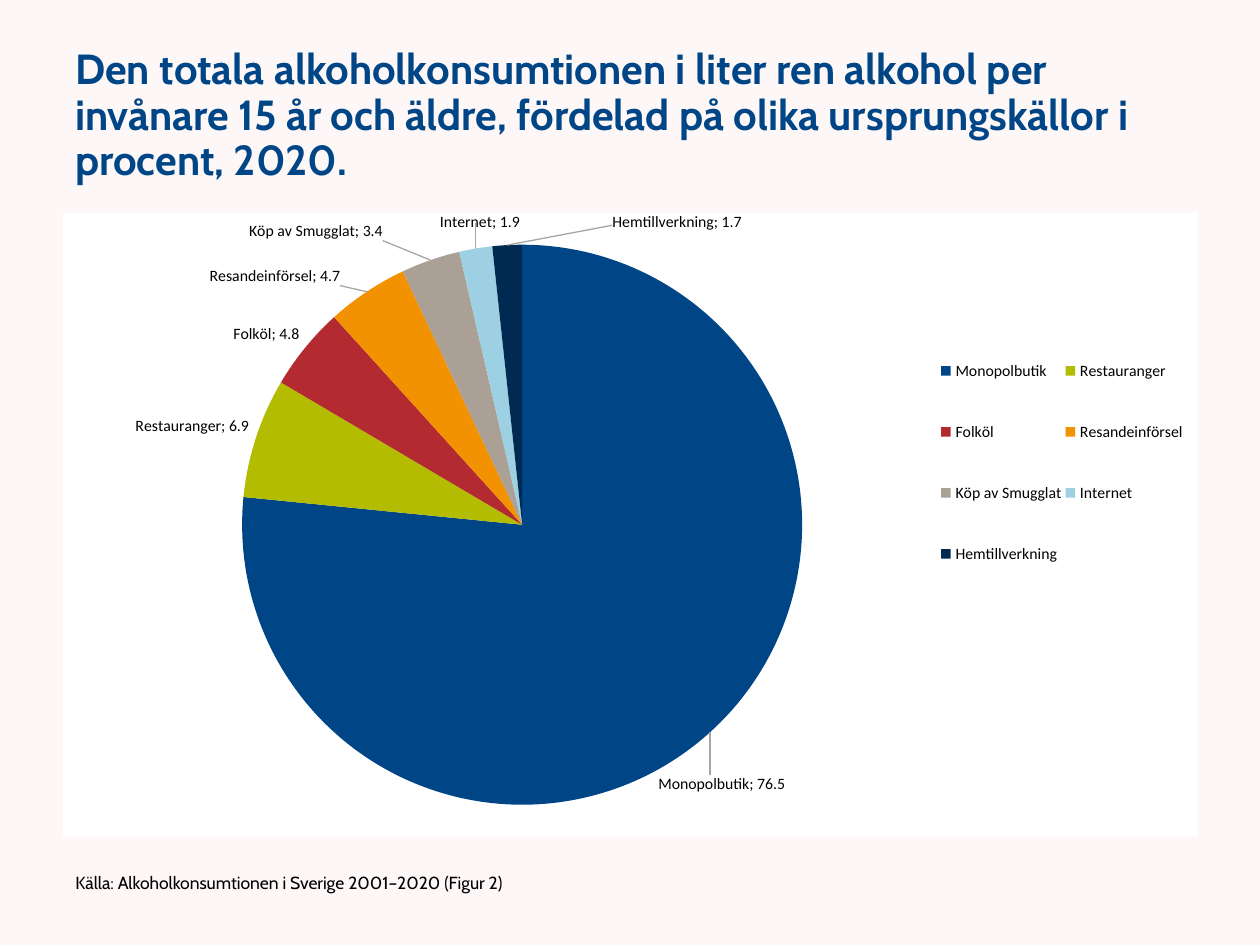
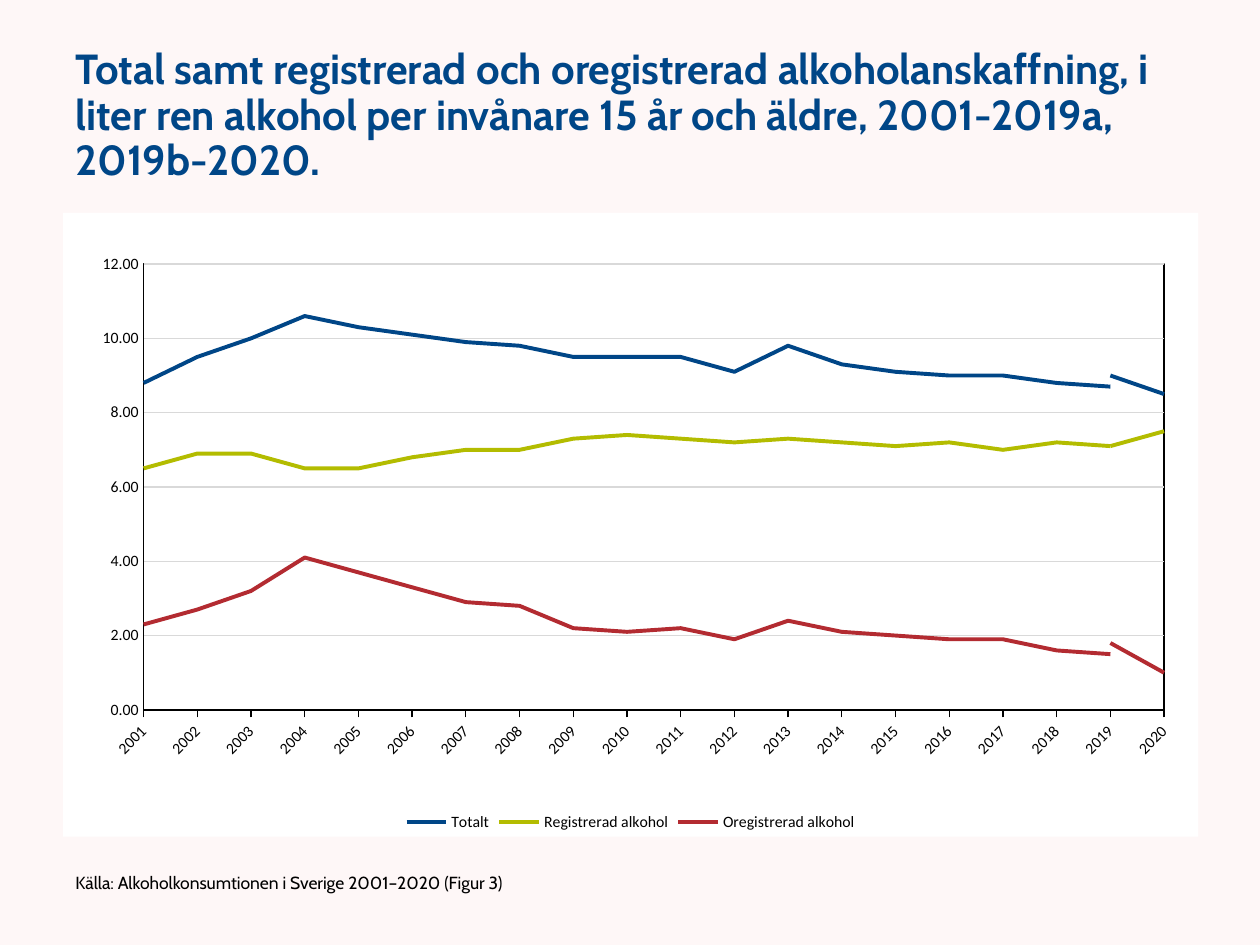
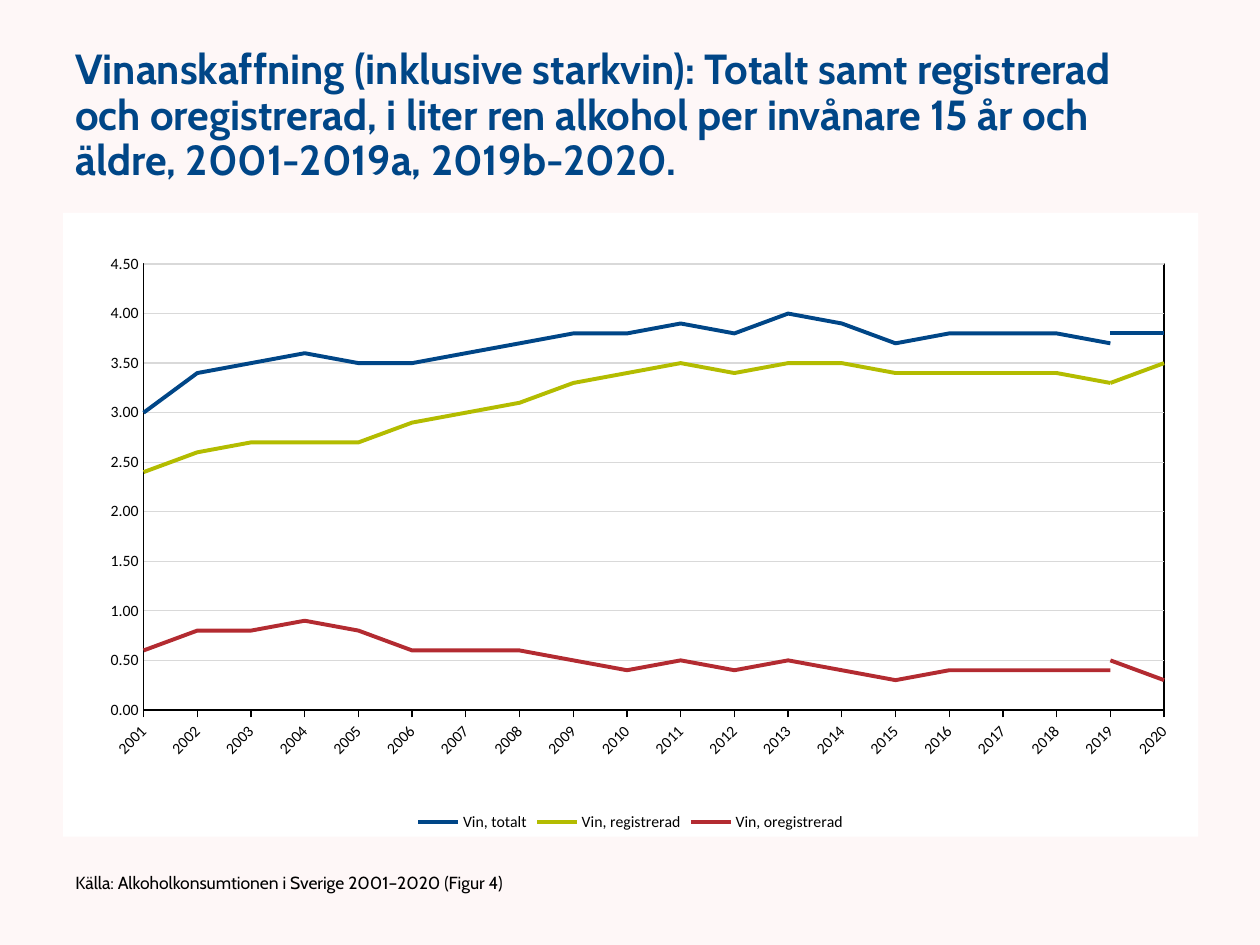
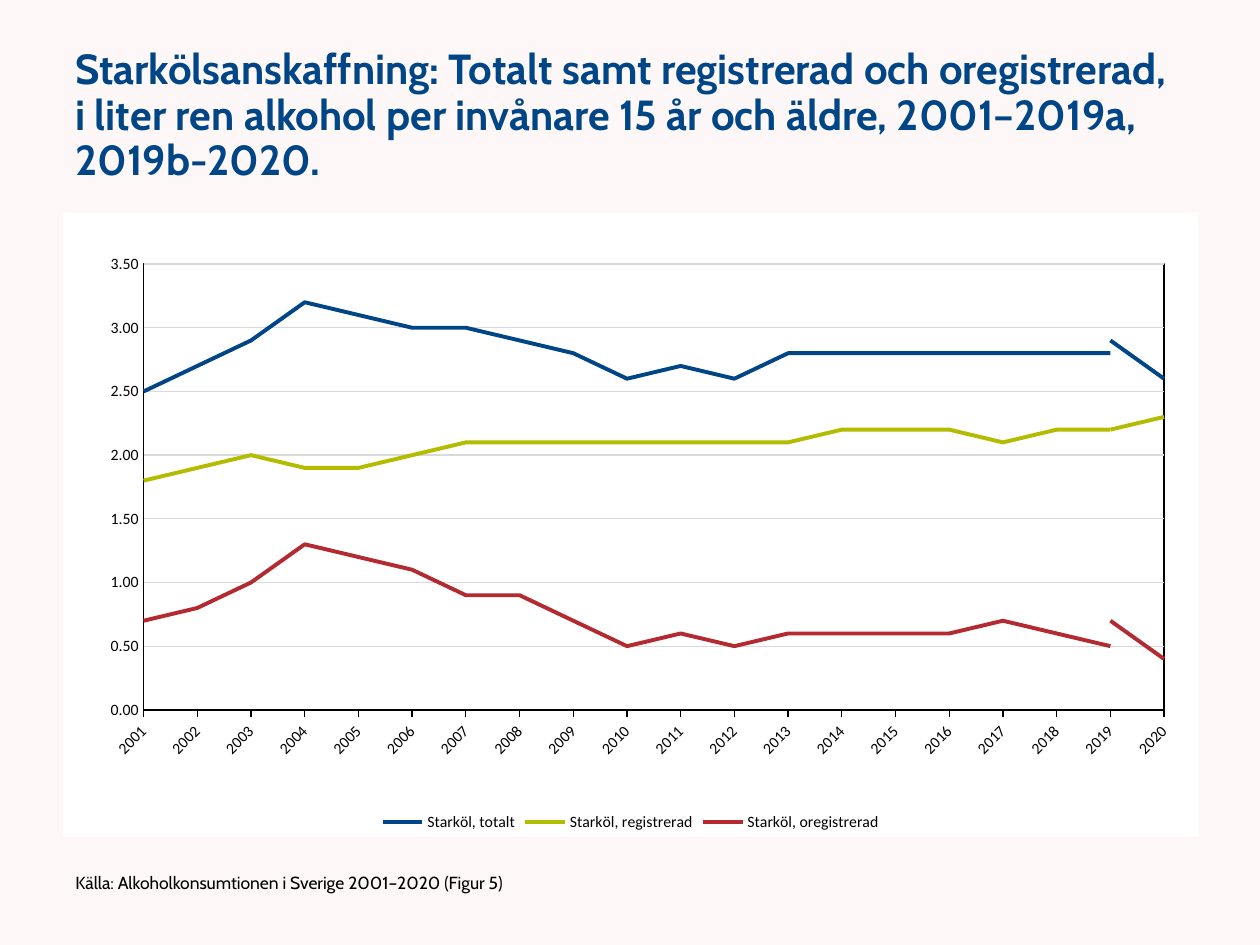
from dataclasses import dataclass

from pptx import Presentation
from pptx.chart.data import CategoryChartData
from pptx.dml.color import RGBColor
from pptx.enum.chart import (XL_CHART_TYPE, XL_LABEL_POSITION,
                             XL_LEGEND_POSITION, XL_TICK_MARK)
from pptx.enum.text import MSO_ANCHOR
from pptx.oxml import parse_xml
from pptx.oxml.ns import nsdecls, qn
from pptx.util import Inches, Pt

PIE, LINE = XL_CHART_TYPE.PIE, XL_CHART_TYPE.LINE
LEGEND_RIGHT, LEGEND_BOTTOM = XL_LEGEND_POSITION.RIGHT, XL_LEGEND_POSITION.BOTTOM
OUTSIDE_END = XL_LABEL_POSITION.OUTSIDE_END
TICK_OUT, TICK_NONE = XL_TICK_MARK.OUTSIDE, XL_TICK_MARK.NONE
MIDDLE = MSO_ANCHOR.MIDDLE


@dataclass(frozen=True)
class Theme:
    background: str = "FEF7F7"
    panel: str = "FFFFFF"
    blue: str = "004687"
    black: str = "000000"
    grid: str = "D9D9D9"
    leader: str = "A6A6A6"
    palette: tuple = ("004687", "B3BC00", "B32B31", "F29200",
                      "AAA096", "9CD0E2", "002A51")
    text_font: str = "Cabin"
    chart_font: str = "Calibri"
    title_size: float = 24
    source_size: float = 10
    chart_size: float = 10
    label_size: float = 9
    axis_width: float = 0.75
    series_width: float = 2.25


THEME = Theme()

# Boxes: left, top, width, height in inches
TITLE_BOX = (0.5, 0.3, 9, 1.25)
CHART_BOX = (0.5, 1.69, 9.01, 4.95)
SOURCE_BOX = (0.5, 6.83, 4.5, 0.37)

# Layouts inside a chart: x, y, width, height as shares of the chart
PIE_PLOT, PIE_LEGEND = (0.135, 0.051, 0.539, 0.898), (0.77, 0.17, 0.22, 0.46)
LINE_PLOT, LINE_LEGEND = (0.071, 0.082, 0.899, 0.715), (0.05, 0.925, 0.92, 0.06)

SHARES = {"Monopolbutik": 76.5, "Restauranger": 6.9, "Folköl": 4.8,
          "Resandeinförsel": 4.7, "Köp av Smugglat": 3.4, "Internet": 1.9,
          "Hemtillverkning": 1.7}
# Label shifts from the default place, by slice
LABEL_SHIFTS = {0: (-0.05, 0.06), 3: (-0.02, 0), 4: (-0.04, -0.02),
                5: (0.04, -0.03), 6: (0.15, -0.02)}

YEARS = [str(year) for year in range(2001, 2021)]
PIE_TITLE = ("Den totala alkoholkonsumtionen i liter ren alkohol per invånare 15 år "
             "och äldre, fördelad på olika ursprungskällor i procent, 2020.")

# Each line: name, values 2001–2019 (first method), values 2019–2020 (second)
LINE_PAGES = [
    {"title": "Total samt registrerad och oregistrerad alkoholanskaffning, i liter "
              "ren alkohol per invånare 15 år och äldre, 2001-2019a, 2019b-2020.",
     "scale": (12, 2),
     "lines": [
         ("Totalt", [8.8, 9.5, 10, 10.6, 10.3, 10.1, 9.9, 9.8, 9.5, 9.5, 9.5, 9.1,
                     9.8, 9.3, 9.1, 9, 9, 8.8, 8.7], [9, 8.5]),
         ("Registrerad alkohol", [6.5, 6.9, 6.9, 6.5, 6.5, 6.8, 7, 7, 7.3, 7.4, 7.3,
                                  7.2, 7.3, 7.2, 7.1, 7.2, 7, 7.2, 7.1], [7.1, 7.5]),
         ("Oregistrerad alkohol", [2.3, 2.7, 3.2, 4.1, 3.7, 3.3, 2.9, 2.8, 2.2, 2.1,
                                   2.2, 1.9, 2.4, 2.1, 2, 1.9, 1.9, 1.6, 1.5], [1.8, 1]),
     ]},
    {"title": "Vinanskaffning (inklusive starkvin): Totalt samt registrerad och "
              "oregistrerad, i liter ren alkohol per invånare 15 år och äldre, "
              "2001-2019a, 2019b-2020.",
     "scale": (4.5, 0.5),
     "lines": [
         ("Vin, totalt", [3, 3.4, 3.5, 3.6, 3.5, 3.5, 3.6, 3.7, 3.8, 3.8, 3.9, 3.8,
                          4, 3.9, 3.7, 3.8, 3.8, 3.8, 3.7], [3.8, 3.8]),
         ("Vin, registrerad", [2.4, 2.6, 2.7, 2.7, 2.7, 2.9, 3, 3.1, 3.3, 3.4, 3.5,
                               3.4, 3.5, 3.5, 3.4, 3.4, 3.4, 3.4, 3.3], [3.3, 3.5]),
         ("Vin, oregistrerad", [0.6, 0.8, 0.8, 0.9, 0.8, 0.6, 0.6, 0.6, 0.5, 0.4, 0.5,
                                0.4, 0.5, 0.4, 0.3, 0.4, 0.4, 0.4, 0.4], [0.5, 0.3]),
     ]},
    {"title": "Starkölsanskaffning: Totalt samt registrerad och oregistrerad, i liter "
              "ren alkohol per invånare 15 år och äldre, 2001–2019a, 2019b-2020.",
     "scale": (3.5, 0.5),
     "lines": [
         ("Starköl, totalt", [2.5, 2.7, 2.9, 3.2, 3.1, 3, 3, 2.9, 2.8, 2.6, 2.7, 2.6,
                              2.8, 2.8, 2.8, 2.8, 2.8, 2.8, 2.8], [2.9, 2.6]),
         ("Starköl, registrerad", [1.8, 1.9, 2, 1.9, 1.9, 2, 2.1, 2.1, 2.1, 2.1, 2.1,
                                   2.1, 2.1, 2.2, 2.2, 2.2, 2.1, 2.2, 2.2], [2.2, 2.3]),
         ("Starköl, oregistrerad", [0.7, 0.8, 1, 1.3, 1.2, 1.1, 0.9, 0.9, 0.7, 0.5, 0.6,
                                    0.5, 0.6, 0.6, 0.6, 0.6, 0.7, 0.6, 0.5], [0.7, 0.4]),
     ]},
]


# Shared formatting
def set_font(font, size, name, color=THEME.black, bold=False):
    font.size, font.name, font.bold = Pt(size), name, bold
    font.color.rgb = RGBColor.from_string(color)


def set_line(line, color, width=THEME.axis_width):
    line.color.rgb = RGBColor.from_string(color)
    line.width = Pt(width)


def chart_xml(tag, content="", attributes=""):
    return parse_xml(f"<c:{tag} {nsdecls('c', 'a')} {attributes}>{content}</c:{tag}>")


def solid(color):
    return f'<a:solidFill><a:srgbClr val="{color}"/></a:solidFill>'


def layout_xml(box, target=""):
    """Manual layout with edge-based x, y, width and height."""
    modes = '<c:xMode val="edge"/><c:yMode val="edge"/>'
    sizes = "".join(f'<c:{key} val="{value}"/>' for key, value in zip("xywh", box))
    return chart_xml("layout", f"<c:manualLayout>{target}{modes}{sizes}</c:manualLayout>")


# Text regions
def add_text(page, box, text, size, color=THEME.black, bold=False):
    frame = page.shapes.add_textbox(*map(Inches, box)).text_frame
    frame.word_wrap = True
    frame.vertical_anchor = MIDDLE
    frame.text = text
    para = frame.paragraphs[0]
    para.line_spacing = 0.9
    set_font(para.runs[0].font, size, THEME.text_font, color, bold)
    return para


def add_page(deck, title, figure):
    """Page with background, title and source line."""
    page = deck.slides.add_slide(deck.slide_layouts[6])
    page.background.fill.solid()
    page.background.fill.fore_color.rgb = RGBColor.from_string(THEME.background)
    add_text(page, TITLE_BOX, title, THEME.title_size, THEME.blue, True)
    source = add_text(page, SOURCE_BOX,
                      f"Källa: Alkoholkonsumtionen i Sverige 2001–2020 (Figur {figure})",
                      THEME.source_size)
    properties = source._p.get_or_add_pPr()
    properties.set("marL", str(Inches(0.25)))
    properties.set("indent", str(-Inches(0.25)))
    return page


# Chart regions
def add_panel_chart(page, box, kind, data, plot_box):
    """Chart on a white panel with a fixed plot area."""
    chart = page.shapes.add_chart(kind, *map(Inches, box), data).chart
    chart.has_title = False
    set_font(chart.font, THEME.chart_size, THEME.chart_font)
    chart_part = chart._chartSpace.find(qn("c:chart"))
    chart_part.addnext(chart_xml("spPr", solid(THEME.panel) + "<a:ln><a:noFill/></a:ln>"))
    plot_area = chart_part.find(qn("c:plotArea"))
    for layout in plot_area.findall(qn("c:layout")):
        plot_area.remove(layout)
    plot_area.insert(0, layout_xml(plot_box, '<c:layoutTarget val="inner"/>'))
    return chart, plot_area


def add_legend(chart, position, box, hidden=()):
    chart.has_legend = True
    legend = chart.legend
    legend.position = position
    legend.include_in_layout = False
    set_font(legend.font, THEME.label_size, THEME.chart_font)
    place = legend._element.find(qn("c:legendPos"))
    place.addnext(layout_xml(box))
    for index in reversed(hidden):
        place.addnext(chart_xml("legendEntry",
                                f'<c:idx val="{index}"/><c:delete val="1"/>'))


def shift_label(label, shift):
    set_font(label.font, THEME.label_size, THEME.chart_font)
    label.position = OUTSIDE_END
    element = label._dLbl
    x, y = shift
    element.find(qn("c:idx")).addnext(chart_xml(
        "layout", f'<c:manualLayout><c:x val="{x}"/><c:y val="{y}"/></c:manualLayout>'))
    element.find(qn("c:showCatName")).set("val", "1")
    element.append(chart_xml("separator", "; "))


def add_pie(page, box):
    data = CategoryChartData()
    data.categories = list(SHARES)
    data.add_series("Series 1", list(SHARES.values()))
    chart, _ = add_panel_chart(page, box, PIE, data, PIE_PLOT)
    add_legend(chart, LEGEND_RIGHT, PIE_LEGEND)
    plot = chart.plots[0]
    plot.vary_by_categories = True
    series = plot.series[0]
    for index, color in enumerate(THEME.palette):
        fill = series.points[index].format.fill
        fill.solid()
        fill.fore_color.rgb = RGBColor.from_string(color)

    # Labels with category and value, some moved out on leader lines
    labels = series.data_labels
    labels.show_value = labels.show_category_name = True
    labels.position = OUTSIDE_END
    set_font(labels.font, THEME.label_size, THEME.chart_font)
    element = labels._element
    element.find(qn("c:showBubbleSize")).addnext(chart_xml("separator", "; "))
    element.append(chart_xml(
        "leaderLines", f'<c:spPr><a:ln w="9525">{solid(THEME.leader)}</a:ln></c:spPr>'))
    for index, shift in LABEL_SHIFTS.items():
        shift_label(series.points[index].data_label, shift)


def style_axes(chart, scale):
    years, liters = chart.category_axis, chart.value_axis
    for axis, tick in ((years, TICK_OUT), (liters, TICK_NONE)):
        axis.major_tick_mark, axis.minor_tick_mark = tick, TICK_NONE
        set_font(axis.tick_labels.font, THEME.label_size, THEME.chart_font)
        set_line(axis.format.line, THEME.black)
    years.has_major_gridlines = False
    years._element.find(qn("c:txPr")).find(qn("a:bodyPr")).set("rot", "-2700000")
    liters.has_major_gridlines = True
    set_line(liters.major_gridlines.format.line, THEME.grid)
    liters.minimum_scale = 0
    liters.maximum_scale, liters.major_unit = scale
    liters.tick_labels.number_format = "0.00"
    liters.tick_labels.number_format_is_linked = False
    # Lines start on the value axis
    element = liters._element
    for crossing in element.findall(qn("c:crossBetween")):
        element.remove(crossing)
    element.find(qn("c:crosses")).addnext(
        chart_xml("crossBetween", attributes='val="midCat"'))


def add_lines(page, box, lines, scale):
    data = CategoryChartData()
    data.categories = YEARS
    for index, (name, first, second) in enumerate(lines):
        data.add_series(name, first + [None] * (len(YEARS) - len(first)))
        data.add_series(f"Series {2 * index + 2}",
                        [None] * (len(YEARS) - len(second)) + second)
    chart, plot_area = add_panel_chart(page, box, LINE, data, LINE_PLOT)
    add_legend(chart, LEGEND_BOTTOM, LINE_LEGEND, hidden=range(1, 2 * len(lines), 2))
    style_axes(chart, scale)
    plot_area.append(chart_xml(
        "spPr", f'<a:noFill/><a:ln w="9525">{solid(THEME.black)}</a:ln>'))
    plot = chart.plots[0]
    plot.vary_by_categories = False
    for index, series in enumerate(plot.series):
        series.smooth = False
        set_line(series.format.line, THEME.palette[index // 2], THEME.series_width)


def main():
    deck = Presentation()
    deck.slide_width, deck.slide_height = Inches(10), Inches(7.5)
    add_pie(add_page(deck, PIE_TITLE, 2), CHART_BOX)
    for figure, content in enumerate(LINE_PAGES, start=3):
        page = add_page(deck, content["title"], figure)
        add_lines(page, CHART_BOX, content["lines"], content["scale"])
    deck.save("out.pptx")


if __name__ == "__main__":
    main()
